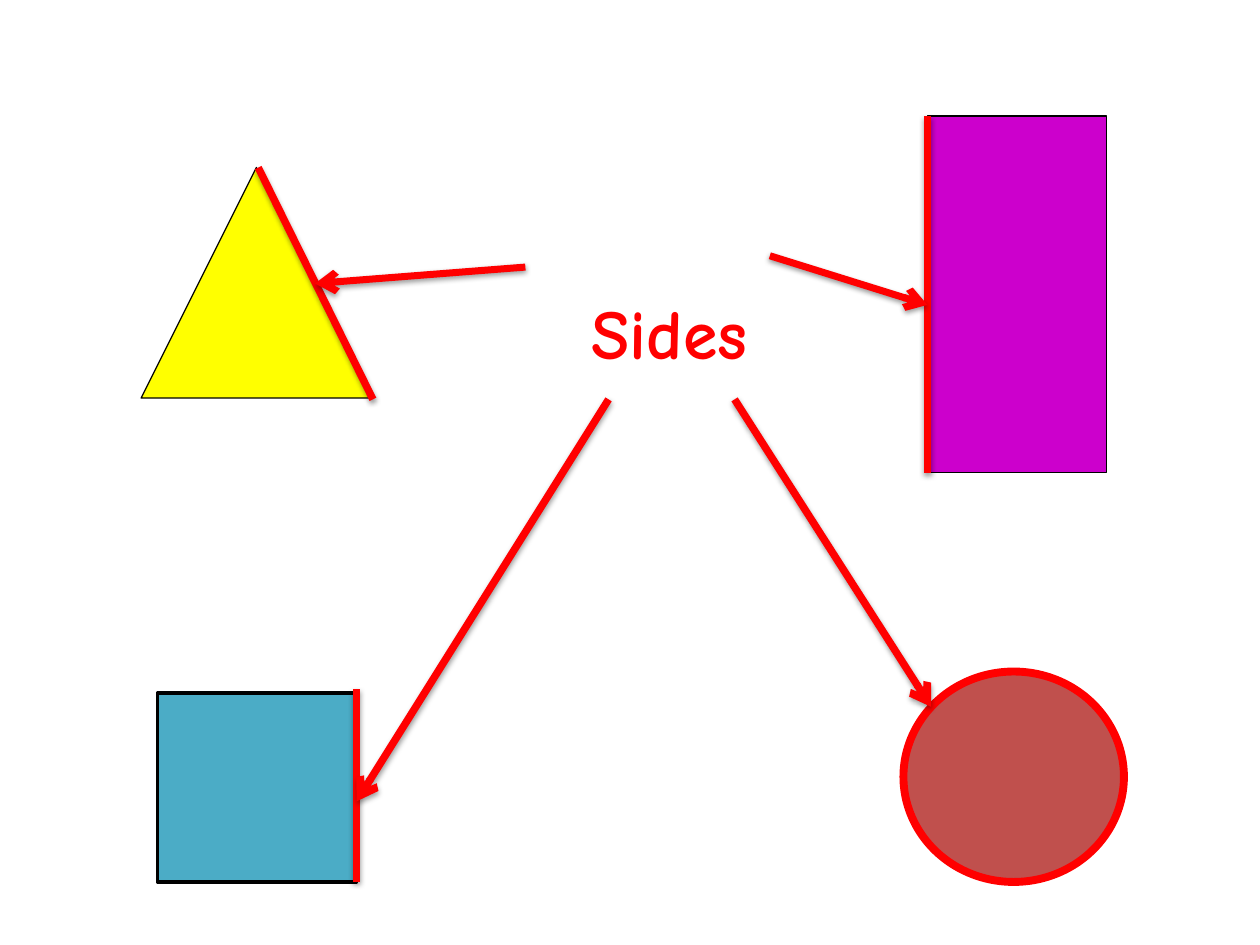
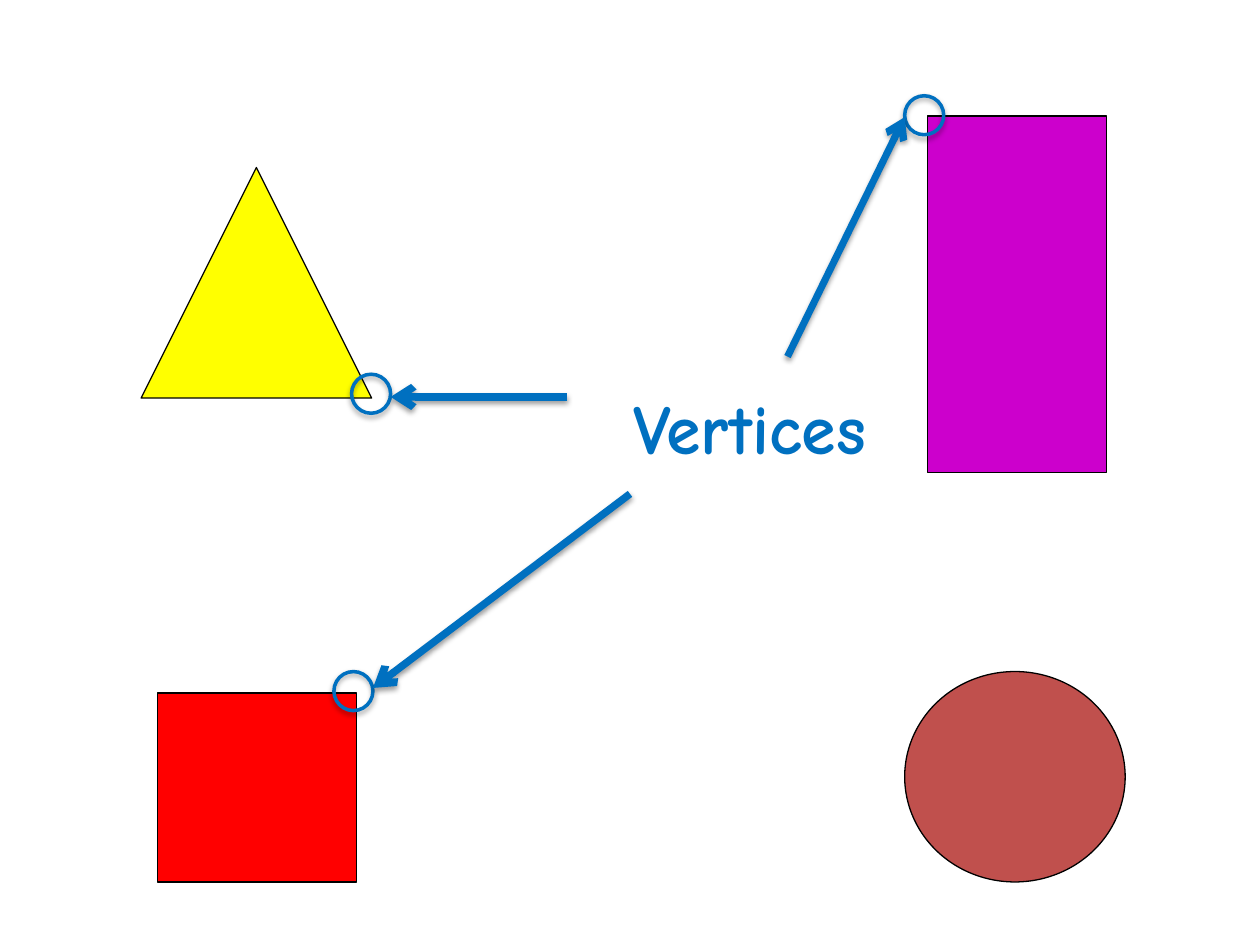
from lxml.etree import SubElement
from pptx import Presentation
from pptx.dml.color import RGBColor
from pptx.enum.shapes import MSO_CONNECTOR, MSO_SHAPE
from pptx.enum.text import MSO_ANCHOR, MSO_AUTO_SIZE, PP_ALIGN
from pptx.oxml.ns import qn
from pptx.util import Inches, Pt

BLACK, RED, BLUE = "000000", "FF0000", "0070C0"
TEAL, BRICK, YELLOW, PURPLE = "4BACC6", "C0504D", "FFFF00", "CC00CC"
FONT = "Comic Neue"
RING_SIZE = 0.31


def colour(value):
    return RGBColor.from_string(value)


class GeometrySlide:
    def __init__(self, deck, accent):
        self.slide = deck.slides.add_slide(deck.slide_layouts[5])
        self.accent = accent

    def label(self, text, left, top, width):
        title = self.slide.shapes.title
        title.left, title.top = Inches(left), Inches(top)
        title.width, title.height = Inches(width), Inches(0.77)
        frame = title.text_frame
        frame.text = text
        frame.word_wrap = True
        frame.auto_size = MSO_AUTO_SIZE.SHAPE_TO_FIT_TEXT
        frame.vertical_anchor = MSO_ANCHOR.TOP
        paragraph = frame.paragraphs[0]
        paragraph.alignment = PP_ALIGN.CENTER
        font = paragraph.runs[0].font
        font.name, font.size, font.bold = FONT, Pt(40), True
        font.color.rgb = colour(self.accent)

    def figure(self, kind, left, top, width, height, fill=None, line=BLACK, weight=0.75):
        shape = self.slide.shapes.add_shape(
            kind, Inches(left), Inches(top), Inches(width), Inches(height))
        shape.shadow.inherit = False
        if fill:
            shape.fill.solid()
            shape.fill.fore_color.rgb = colour(fill)
        else:
            shape.fill.background()
        shape.line.color.rgb = colour(line)
        shape.line.width = Pt(weight)
        return shape

    def figures(self, square_fill, square_weight=0.75):
        self.figure(MSO_SHAPE.RECTANGLE, 1.25, 5.5, 1.58, 1.5, square_fill, weight=square_weight)
        self.figure(MSO_SHAPE.OVAL, 7.18, 5.33, 1.75, 1.67, BRICK)
        self.figure(MSO_SHAPE.ISOSCELES_TRIANGLE, 1.12, 1.33, 1.83, 1.83, YELLOW)
        self.figure(MSO_SHAPE.RECTANGLE, 7.36, 0.92, 1.42, 2.83, PURPLE)

    def vertex_ring(self, left, top):
        ring = self.figure(MSO_SHAPE.OVAL, left, top, RING_SIZE, RING_SIZE,
                           line=self.accent, weight=2)
        self.shadow(ring, 1.8, 35)

    def side(self, start, end, weight=4.25):
        line = self.slide.shapes.add_connector(
            MSO_CONNECTOR.STRAIGHT, *map(Inches, start + end))
        line.line.color.rgb = colour(self.accent)
        line.line.width = Pt(weight)
        self.shadow(line, 1.6, 38)
        return line

    def arrow(self, start, end, weight=4.25):
        outline = self.side(start, end, weight).line._get_or_add_ln()
        SubElement(outline, qn("a:tailEnd"), type="arrow")

    def shadow(self, shape, distance, opacity):
        properties = shape._element.spPr
        effects = properties.find(qn("a:effectLst"))
        if effects is None:
            effects = SubElement(properties, qn("a:effectLst"))
        outer = SubElement(effects, qn("a:outerShdw"), blurRad=str(Pt(3.1)),
                           dist=str(Pt(distance)), dir="5400000", rotWithShape="0")
        tint = SubElement(outer, qn("a:srgbClr"), val=BLACK)
        SubElement(tint, qn("a:alpha"), val=str(opacity * 1000))


def build_sides(deck):
    sides = GeometrySlide(deck, RED)
    sides.figures(TEAL, 2)
    for start, end in (((7.36, 0.92), (7.36, 3.75)),
                       ((2.05, 1.33), (2.96, 3.17)),
                       ((2.83, 5.47), (2.83, 7))):
        sides.side(start, end)
    sides.label("Sides", 4.38, 2.25, 1.87)
    sides.figure(MSO_SHAPE.OVAL, 7.17, 5.33, 1.75, 1.67, line=RED, weight=4.5)
    sides.arrow((6.11, 2.03), (7.36, 2.42), 4)
    sides.arrow((4.17, 2.12), (2.5, 2.25), 4)
    sides.arrow((4.83, 3.17), (2.83, 6.36))
    sides.arrow((5.83, 3.17), (7.39, 5.61))


def build_vertices(deck):
    vertices = GeometrySlide(deck, BLUE)
    vertices.figures(RED)
    for left, top in ((2.79, 2.97), (7.18, 0.76), (2.65, 5.33)):
        vertices.vertex_ring(left, top)
    vertices.label("Vertices", 4.72, 3, 2.46)
    vertices.arrow((6.25, 2.83), (7.18, 0.93), 4)
    vertices.arrow((5, 3.92), (2.96, 5.46))
    vertices.arrow((4.5, 3.15), (3.1, 3.15))


def main():
    deck = Presentation()
    deck.slide_width, deck.slide_height = Inches(10), Inches(7.5)
    build_sides(deck)
    build_vertices(deck)
    deck.save("out.pptx")


if __name__ == "__main__":
    main()
